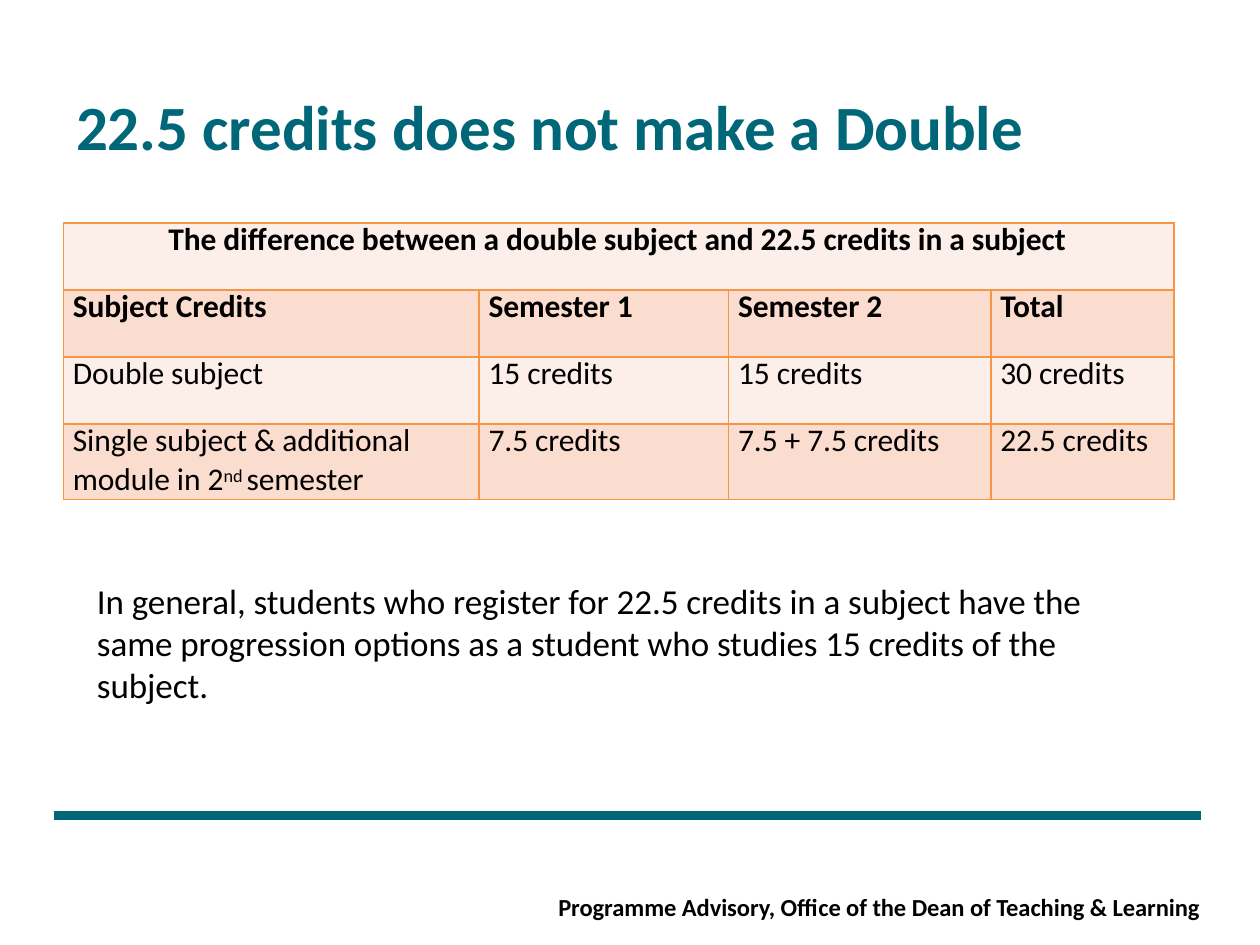
import pptx
import pptx.util
import pptx.dml.color
import pptx.enum.shapes
import pptx.enum.text
import pptx.oxml
import pptx.oxml.ns
from lxml import etree

Pt = pptx.util.Pt
COLORS = {"teal": "006778", "black": "000000", "border": "F79546",
          "light": "FCEEE9", "dark": "FBDDCF"}


def rgb(name):
    return pptx.dml.color.RGBColor.from_string(COLORS[name])


def write(p, text, size=18, color="black", bold=False, indent=0,
          line=None, spacing=-0.07, baseline=0, font="Calibri"):
    """Add one formatted run to a paragraph."""
    p.alignment = pptx.enum.text.PP_ALIGN.LEFT
    p.space_before = Pt(0)
    if line:
        p.line_spacing = Pt(line)
    if indent:
        p._p.get_or_add_pPr().set("marL", str(Pt(indent)))
    r = p.add_run()
    r.text = text
    r.font.name, r.font.size, r.font.bold = font, Pt(size), bold
    r.font.color.rgb = rgb(color)
    rPr = r._r.get_or_add_rPr()
    rPr.set("spc", str(round(spacing * 100)))
    if baseline:
        rPr.set("baseline", str(baseline * 1000))
    return r


class SlideBuilder:
    def __init__(self, prs):
        self.s = prs.slides.add_slide(prs.slide_layouts[5])

    def frame(self, sp):
        tf = sp.text_frame
        tf.word_wrap = True
        tf.auto_size = pptx.enum.text.MSO_AUTO_SIZE.NONE
        tf.vertical_anchor = pptx.enum.text.MSO_ANCHOR.TOP
        tf.margin_left = tf.margin_right = tf.margin_bottom = 0
        tf.margin_top = Pt(2)
        return tf

    def title(self, text, x, y, w, h, **style):
        sp = self.s.shapes.title
        sp.left, sp.top, sp.width, sp.height = map(Pt, (x, y, w, h))
        write(self.frame(sp).paragraphs[0], text, **style)

    def text(self, text, x, y, w, h, **style):
        sp = self.s.shapes.add_textbox(*map(Pt, (x, y, w, h)))
        write(self.frame(sp).paragraphs[0], text, **style)

    def rule(self, x1, x2, y, width, color):
        line = self.s.shapes.add_connector(
            pptx.enum.shapes.MSO_CONNECTOR.STRAIGHT, *map(Pt, (x1, y, x2, y)))
        line.line.color.rgb = rgb(color)
        line.line.width = Pt(width)
        etree.SubElement(line._element.spPr, pptx.oxml.ns.qn("a:effectLst"))

    def borders(self, cell):
        tcPr = cell._tc.get_or_add_tcPr()
        for i, side in enumerate(("lnL", "lnR", "lnT", "lnB")):
            tcPr.insert(i, pptx.oxml.parse_xml(
                f'<a:{side} {pptx.oxml.ns.nsdecls("a")} w="{Pt(1)}"><a:solidFill>'
                f'<a:srgbClr val="{COLORS["border"]}"/></a:solidFill></a:{side}>'))

    def table(self, rows, x, y, widths, heights):
        table = self.s.shapes.add_table(
            len(rows), len(widths),
            *map(Pt, (x, y, sum(widths), sum(heights)))).table
        for col, w in zip(table.columns, widths):
            col.width = Pt(w)
        for row, h in zip(table.rows, heights):
            row.height = Pt(h)
        for i, row in enumerate(rows):
            for j in range(len(widths)):
                cell = table.cell(i, j)
                cell.margin_left = cell.margin_right = 0
                cell.margin_top = cell.margin_bottom = 0
                cell.fill.solid()
                cell.fill.fore_color.rgb = rgb("dark" if i % 2 else "light")
                self.borders(cell)
                if j < len(row):
                    write(cell.text_frame.paragraphs[0], row[j], bold=i < 2,
                          indent=60 if i == 0 else 5.4, line=20.6)
        table.cell(0, 0).merge(table.cell(0, len(widths) - 1))
        return table


def main():
    prs = pptx.Presentation()
    prs.slide_width, prs.slide_height = Pt(720), Pt(540)
    b = SlideBuilder(prs)

    # Divider and title
    b.rule(31, 686.2, 466, 5.64, "teal")
    b.title("22.5 credits does not make a Double", 43.5, 48.2, 545, 45.4,
            size=36, color="teal", bold=True)

    # Credit comparison
    table = b.table([
        ["The difference between a double subject and 22.5 credits in a subject"],
        ["Subject Credits", "Semester 1", "Semester 2", "Total"],
        ["Double subject", "15 credits", "15 credits", "30 credits"],
        ["Single subject & additional", "7.5 credits", "7.5 + 7.5 credits",
         "22.5 credits"],
    ], 36.2, 127.4, [237.6, 142.6, 149.8, 104.8], [38.3, 38.3, 38.3, 43.2])
    p = table.cell(3, 0).text_frame.add_paragraph()
    for text, baseline in (("module in 2", 0), ("nd ", 25), ("semester", 0)):
        write(p, text, indent=5.4, baseline=baseline)

    # Footer and explanation
    b.text("Programme Advisory, Office of the Dean of Teaching & Learning",
           319, 507.6, 372, 18.7, size=14, bold=True)
    b.text("In general, students who register for 22.5 credits in a subject have "
           "the same progression options as a student who studies 15 credits of "
           "the subject.", 55.4, 329, 567.4, 92, size=20)

    prs.save("out.pptx")


if __name__ == "__main__":
    main()
